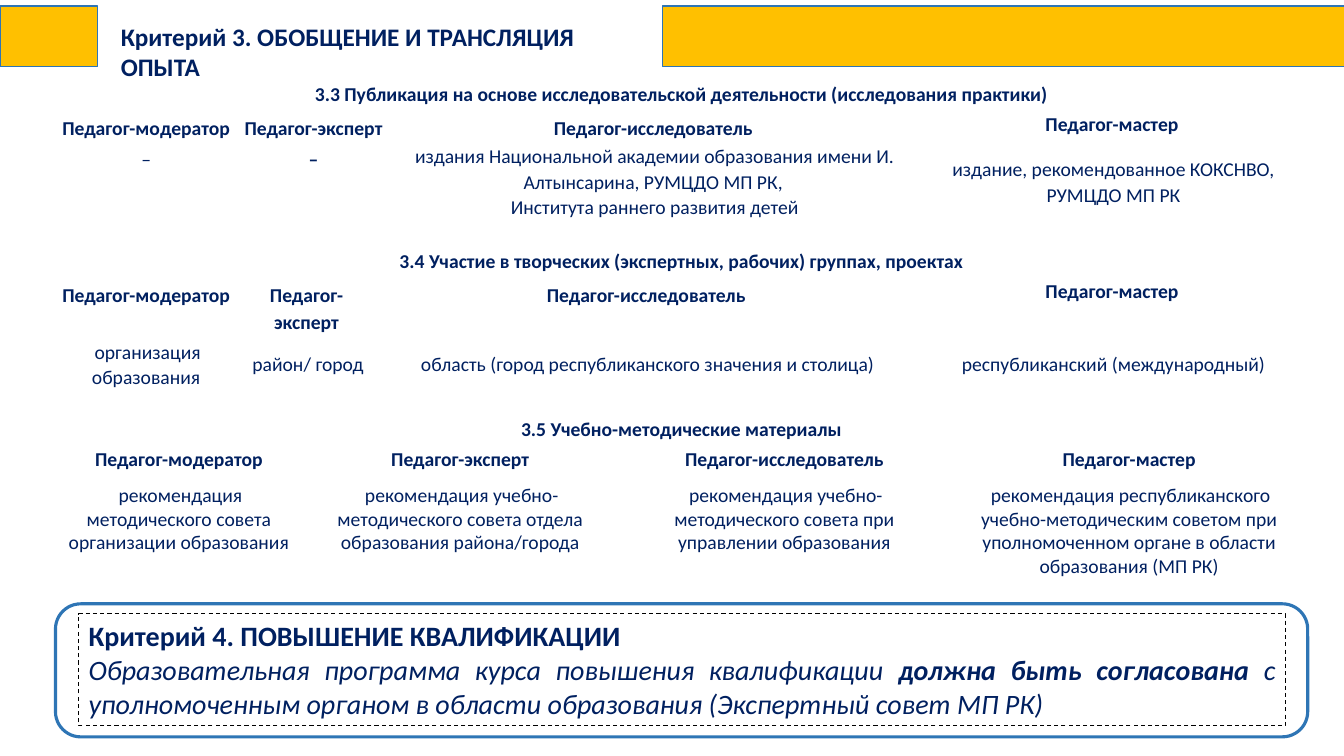
from dataclasses import dataclass

from pptx import Presentation
from pptx.dml.color import RGBColor
from pptx.enum.dml import MSO_LINE
from pptx.enum.shapes import MSO_SHAPE as Shape
from pptx.enum.text import MSO_ANCHOR as Anchor, PP_ALIGN as Align
from pptx.util import Inches, Pt


@dataclass(frozen=True)
class Theme:
    font: str = "Calibri"
    navy: RGBColor = RGBColor(0x00, 0x20, 0x60)
    gold: RGBColor = RGBColor(0xFF, 0xC0, 0x00)
    blue: RGBColor = RGBColor(0x2E, 0x75, 0xB5)
    white: RGBColor = RGBColor(0xFF, 0xFF, 0xFF)
    black: RGBColor = RGBColor(0x00, 0x00, 0x00)
    table_size: int = 14
    title_size: int = 18
    note_size: int = 20


@dataclass(frozen=True)
class Section:
    title: str
    top: float
    widths: tuple
    heights: tuple
    details: tuple
    margins: tuple
    anchors: tuple
    title_spacing: float = 1.0
    level_spacing: float = 1.0
    detail_spacing: float = 1.0


THEME = Theme()
LEFT, TABLE_WIDTH = 0.55, 12.42
LEVELS = ("Педагог-модератор", "Педагог-эксперт",
          "Педагог-исследователь", "Педагог-мастер")
HEADER_MARGINS = (0.05, 0.03, 0.05, 0.03)
DETAIL_MARGINS = (0.07, 0, 0.07, 0)

SECTIONS = (
    Section(
        "3.3 Публикация на основе исследовательской деятельности "
        "(исследования практики)",
        0.76, (1.8, 1.52, 5.22, 3.88), (0.19, 0.19, 0.19),
        ("–", "–",
         "издания Национальной академии образования имени И. Алтынсарина, "
         "РУМЦДО МП РК,\nИнститута раннего развития детей",
         "издание, рекомендованное КОКСНВО,\nРУМЦДО МП РК"),
        (HEADER_MARGINS,) * 2 + (DETAIL_MARGINS,) * 2,
        (Anchor.TOP,) * 2 + (Anchor.MIDDLE,) * 2,
        title_spacing=1.15, level_spacing=1.15, detail_spacing=1.07),
    Section(
        "3.4 Участие в творческих (экспертных, рабочих) группах, проектах",
        2.45, (1.8, 1.38, 5.36, 3.88), (0.19, 0.19, 0.19),
        ("организация образования", "район/ город",
         "область (город республиканского значения и столица)",
         "республиканский (международный)"),
        ((0.01, 0.01, 0.01, 0),) * 4, (Anchor.MIDDLE,) * 4,
        level_spacing=1.15, detail_spacing=1.07),
    Section(
        "3.5 Учебно-методические материалы",
        4.12, (2.45, 3.13, 3.3, 3.54), (0.28, 0.38, 0.88),
        ("рекомендация методического совета организации образования",
         "рекомендация учебно-методического совета отдела образования "
         "района/города",
         "рекомендация учебно-методического совета при управлении образования",
         "рекомендация республиканского учебно-методическим советом при "
         "уполномоченном органе в области образования (МП РК)"),
        (DETAIL_MARGINS,) * 4, (Anchor.TOP,) * 4),
)


def style_font(font, size, bold=False):
    font.name = THEME.font
    font.size = Pt(size)
    font.bold = bold
    font.color.rgb = THEME.navy


def fill_cell(cell, text, margins=HEADER_MARGINS, anchor=Anchor.TOP,
              spacing=1.0, bold=True):
    cell.fill.background()
    cell.vertical_anchor = anchor
    (cell.margin_left, cell.margin_top,
     cell.margin_right, cell.margin_bottom) = map(Inches, margins)
    cell.text = text
    for paragraph in cell.text_frame.paragraphs:
        paragraph.alignment = Align.CENTER
        paragraph.line_spacing = spacing
        style_font(paragraph.font, THEME.table_size, bold)
        if margins != HEADER_MARGINS:
            paragraph._p.get_or_add_pPr().set("indent", str(Inches(0.03)))


def add_section(slide, section):
    table = slide.shapes.add_table(
        len(section.heights), len(LEVELS), Inches(LEFT), Inches(section.top),
        Inches(TABLE_WIDTH), Inches(sum(section.heights))).table
    table.first_row = False
    table.horz_banding = False
    for column, width in zip(table.columns, section.widths):
        column.width = Inches(width)
    for row, height in zip(table.rows, section.heights):
        row.height = Inches(height)
    for cell in table.rows[0].cells:
        cell.fill.background()
    table.cell(0, 0).merge(table.cell(0, len(LEVELS) - 1))
    fill_cell(table.cell(0, 0), section.title, spacing=section.title_spacing)
    for index, level in enumerate(LEVELS):
        spacing = 1.0 if level == LEVELS[-1] else section.level_spacing
        fill_cell(table.cell(1, index), level, spacing=spacing)
        detail = section.details[index]
        is_bold_dash = detail == "–" and index == 1
        fill_cell(table.cell(2, index), detail, section.margins[index],
                  section.anchors[index], section.detail_spacing, is_bold_dash)


def add_box(slide, kind, left, top, width, height, line, weight, fill=None):
    box = slide.shapes.add_shape(
        kind, Inches(left), Inches(top), Inches(width), Inches(height))
    box.shadow.inherit = False
    if fill is None:
        box.fill.background()
    else:
        box.fill.solid()
        box.fill.fore_color.rgb = fill
    box.line.color.rgb = line
    box.line.width = Pt(weight)
    return box


def add_title(slide, text):
    title = slide.shapes.add_textbox(
        Inches(1.1), Inches(0.16), Inches(5.34), Inches(0.4))
    title.text_frame.word_wrap = True
    title.text_frame.text = text
    style_font(title.text_frame.paragraphs[0].font, THEME.title_size, True)


def add_criterion_note(slide, heading, statement):
    frame = add_box(slide, Shape.ROUNDED_RECTANGLE, LEFT, 5.99, TABLE_WIDTH,
                    1.32, THEME.blue, 2.25, THEME.white)
    frame.adjustments[0] = 0.19
    note = add_box(slide, Shape.RECTANGLE, 0.78, 6.09, 11.97, 1.11,
                   THEME.black, 0.75)
    note.line.dash_style = MSO_LINE.DASH
    text_frame = note.text_frame
    text_frame.word_wrap = True
    text_frame.vertical_anchor = Anchor.TOP
    text_frame.text = heading
    first = text_frame.paragraphs[0]
    first.alignment = Align.LEFT
    style_font(first.font, THEME.note_size, True)
    body = text_frame.add_paragraph()
    body.alignment = Align.JUSTIFY
    style_font(body.font, THEME.note_size)
    body.font.italic = True
    for text, bold in statement:
        run = body.add_run()
        run.text = text
        run.font.bold = bold


def main():
    deck = Presentation()
    deck.slide_width, deck.slide_height = Inches(13.33), Inches(7.5)
    slide = deck.slides.add_slide(deck.slide_layouts[6])
    for section in SECTIONS:
        add_section(slide, section)
    for left, width in ((0, 0.97), (6.57, 6.77)):
        add_box(slide, Shape.RECTANGLE, left, 0.06, width, 0.6,
                THEME.blue, 1, THEME.gold)
    add_title(slide, "Критерий 3. ОБОБЩЕНИЕ И ТРАНСЛЯЦИЯ ОПЫТА")
    add_criterion_note(slide, "Критерий 4. ПОВЫШЕНИЕ КВАЛИФИКАЦИИ", (
        ("Образовательная программа курса повышения квалификации ", False),
        ("должна быть согласована ", True),
        ("с уполномоченным органом в области образования "
         "(Экспертный совет МП РК)", False)))
    deck.save("out.pptx")


if __name__ == "__main__":
    main()
